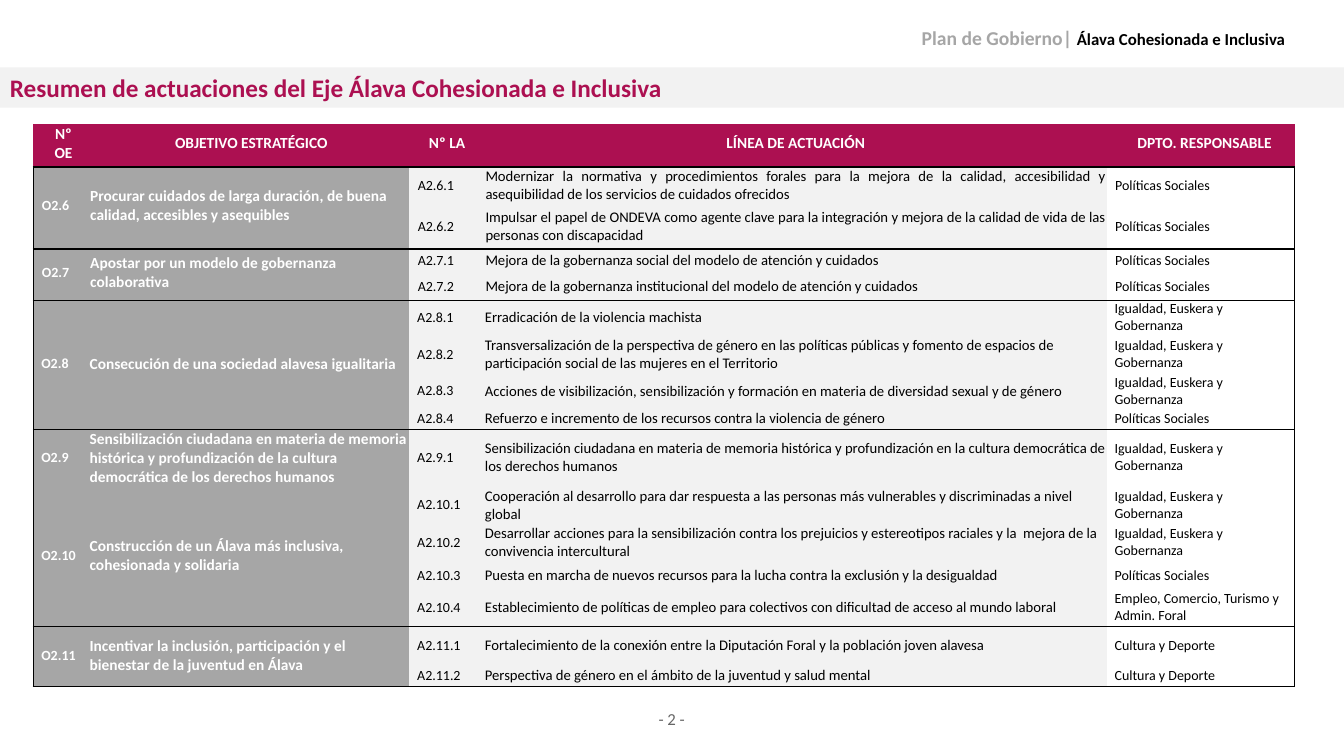
from lxml import etree
from pptx import Presentation
from pptx.dml.color import RGBColor
from pptx.enum.shapes import MSO_SHAPE as SHAPE
from pptx.enum.text import MSO_ANCHOR as ANCHOR, PP_ALIGN as ALIGN
from pptx.oxml.ns import qn
from pptx.util import Pt

COLORS = {"wine": "AC1051", "gray": "A6A6A6", "pale": "F2F2F2",
          "white": "FFFFFF", "black": "000000", "page": "666666"}
FONT = "Calibri"

TITLE = "Resumen de actuaciones del Eje Álava Cohesionada e Inclusiva"
PLAN, AXIS, PAGE = "Plan de Gobierno| ", "Álava Cohesionada e Inclusiva", "- 2 -"
HEADERS = ["Nº OE", "OBJETIVO ESTRATÉGICO", "Nº LA", "LÍNEA DE ACTUACIÓN", "DPTO. RESPONSABLE"]
SOCIAL, EQUALITY = "Políticas Sociales", "Igualdad, Euskera y Gobernanza"
EMPLOYMENT, CULTURE = "Empleo, Comercio, Turismo y Admin. Foral", "Cultura y Deporte"

OBJECTIVES = [
    ("2.6", "Procurar cuidados de larga duración, de buena calidad, accesibles y asequibles", [
        (29.3, "Modernizar la normativa y procedimientos forales para la mejora de la calidad, "
               "accesibilidad y asequibilidad de los servicios de cuidados ofrecidos", SOCIAL),
        (29.3, "Impulsar el papel de ONDEVA como agente clave para la integración y mejora de la "
               "calidad de vida de las personas con discapacidad", SOCIAL)]),
    ("2.7", "Apostar por un modelo de gobernanza colaborativa", [
        (19.4, "Mejora de la gobernanza social del modelo de atención y cuidados", SOCIAL),
        (17.4, "Mejora de la gobernanza institucional del modelo de atención y cuidados", SOCIAL)]),
    ("2.8", "Consecución de una sociedad alavesa igualitaria", [
        (25.6, "Erradicación de la violencia machista", EQUALITY),
        (26.8, "Transversalización de la perspectiva de género en las políticas públicas y fomento de "
               "espacios de participación social de las mujeres en el Territorio", EQUALITY),
        (25.8, "Acciones de visibilización, sensibilización y formación en materia de diversidad "
               "sexual y de género", EQUALITY),
        (13.9, "Refuerzo e incremento de los recursos contra la violencia de género", SOCIAL)]),
    ("2.9", "Sensibilización ciudadana en materia de memoria histórica y profundización de la "
            "cultura democrática de los derechos humanos", [
        (41.2, "Sensibilización ciudadana en materia de memoria histórica y profundización en la "
               "cultura democrática de los derechos humanos", EQUALITY)]),
    ("2.10", "Construcción de un Álava más inclusiva, cohesionada y solidaria", [
        (26.8, "Cooperación al desarrollo para dar respuesta a las personas más vulnerables y "
               "discriminadas a nivel global", EQUALITY),
        (26.8, "Desarrollar acciones para la sensibilización contra los prejuicios y estereotipos "
               "raciales y la  mejora de la convivencia intercultural", EQUALITY),
        (20, "Puesta en marcha de nuevos recursos para la lucha contra la exclusión y la "
             "desigualdad", SOCIAL),
        (25.8, "Establecimiento de políticas de empleo para colectivos con dificultad de acceso al "
               "mundo laboral", EMPLOYMENT)]),
    ("2.11", "Incentivar la inclusión, participación y el bienestar de la juventud en Álava", [
        (28.8, "Fortalecimiento de la conexión entre la Diputación Foral y la población joven "
               "alavesa", CULTURE),
        (14.2, "Perspectiva de género en el ámbito de la juventud y salud mental", CULTURE)]),
]
JUSTIFIED, ROOMY, UNRULED = {"2.6"}, {"2.6", "2.7"}, {"2.10"}
WIDTHS = [34.5, 234, 48.4, 449.8, 134.2]
HEADER_HEIGHT = 30.7
HEADER_INDENTS = [8.6, 8.6, 5.7, 5.7, 5.7]
STYLES = [(10, "white", True, "gray"), (11, "white", True, "gray"), (10, "black", False, "pale"),
          (10.5, "black", False, "pale"), (10, "black", False, "white")]
DEPARTMENT_MARGIN = 3


def rgb(name):
    return RGBColor.from_string(COLORS[name])


def add_run(p, text, size, color, bold=False):
    r = p.add_run()
    r.text = text
    f = r.font
    f.name, f.size, f.bold, f.color.rgb = FONT, Pt(size), bold, rgb(color)


def add_text(s, x, y, w, h, align, anchor, runs):
    tf = s.shapes.add_textbox(Pt(x), Pt(y), Pt(w), Pt(h)).text_frame
    tf.word_wrap, tf.vertical_anchor = True, anchor
    p = tf.paragraphs[0]
    p.alignment = align
    for run in runs:
        add_run(p, *run)


def set_borders(cell, sides):
    tc_pr = cell._tc.get_or_add_tcPr()
    for side in "LRTB":
        ln = etree.SubElement(tc_pr, qn("a:ln" + side), w=str(Pt(1)))
        if side in sides:
            fill = etree.SubElement(ln, qn("a:solidFill"))
            etree.SubElement(fill, qn("a:srgbClr"), val=COLORS["black"])
        else:
            etree.SubElement(ln, qn("a:noFill"))


def fill_cell(cell, text, style, sides, align, indent=5.7, roomy=True):
    size, color, bold, back = style
    set_borders(cell, sides)
    cell.fill.solid()
    cell.fill.fore_color.rgb = rgb(back)
    cell.vertical_anchor = ANCHOR.MIDDLE
    edge = 0.4 if roomy else 0
    cell.margin_left = cell.margin_right = cell.margin_top = Pt(edge)
    cell.margin_bottom = Pt(3.3 if roomy else 1.1)
    p = cell.text_frame.paragraphs[0]
    p.alignment = align
    p._p.get_or_add_pPr().set("marL", str(Pt(indent)))
    p.font.size = Pt(size)
    if text:
        add_run(p, text, size, color, bold)


def add_actions_table(s):
    heights = [HEADER_HEIGHT] + [row[0] for _, _, rows in OBJECTIVES for row in rows]
    table = s.shapes.add_table(len(heights), len(WIDTHS), Pt(23.8), Pt(88.6),
                               Pt(sum(WIDTHS)), Pt(sum(heights))).table
    for col, width in zip(table.columns, WIDTHS):
        col.width = Pt(width)
    for row, height in zip(table.rows, heights):
        row.height = Pt(height)
    for j, (text, indent) in enumerate(zip(HEADERS, HEADER_INDENTS)):
        fill_cell(table.cell(0, j), text, (11, "white", True, "wine"), "B", ALIGN.CENTER, indent)

    i = 1
    for k, (number, objective, rows) in enumerate(OBJECTIVES):
        last = len(rows) - 1
        next_number = OBJECTIVES[k + 1][0] if k + 1 < len(OBJECTIVES) else None
        top = "" if number in UNRULED else "T"
        bottom = "" if next_number in UNRULED else "B"
        for n, (_, action, department) in enumerate(rows):
            first = n == 0
            texts = ["O" + number if first else "", objective if first else "",
                     f"A{number}.{n + 1}", action, department]
            for j, text in enumerate(texts):
                merged = j < 2
                sides = {0: "L", 4: "R"}.get(j, "")
                sides += top if first else ""
                sides += bottom if n == last or (merged and first) else ""
                align = ALIGN.JUSTIFY if j == 3 and number in JUSTIFIED else ALIGN.LEFT
                fill_cell(table.cell(i + n, j), text, STYLES[j], sides, align,
                          roomy=number in ROOMY)
            table.cell(i + n, 4).margin_right = Pt(DEPARTMENT_MARGIN)
        if last:
            for j in (0, 1):
                table.cell(i, j).merge(table.cell(i + last, j))
        i += len(rows)


def main():
    """Build the summary slide of the Álava Cohesionada e Inclusiva axis."""
    prs = Presentation()
    prs.slide_width, prs.slide_height = Pt(960), Pt(540)
    s = prs.slides.add_slide(prs.slide_layouts[6])
    add_text(s, 442, 502.6, 75.6, 21.6, ALIGN.CENTER, ANCHOR.TOP, [(PAGE, 12, "page")])
    add_text(s, 643.7, 10.8, 281.5, 32.4, ALIGN.RIGHT, ANCHOR.MIDDLE,
             [(PLAN, 14, "gray", True), (AXIS, 12, "black", True)])
    add_actions_table(s)

    sp = s.shapes.add_shape(SHAPE.RECTANGLE, Pt(0), Pt(48.2), prs.slide_width, Pt(28.8))
    sp.shadow.inherit = False
    sp.fill.solid()
    sp.fill.fore_color.rgb = rgb("pale")
    sp.line.fill.background()
    tf = sp.text_frame
    tf.word_wrap, tf.vertical_anchor = True, ANCHOR.TOP
    p = tf.paragraphs[0]
    p.alignment, p.space_after = ALIGN.LEFT, Pt(6)
    add_run(p, TITLE, 18, "wine", True)
    prs.save("out.pptx")


if __name__ == "__main__":
    main()
